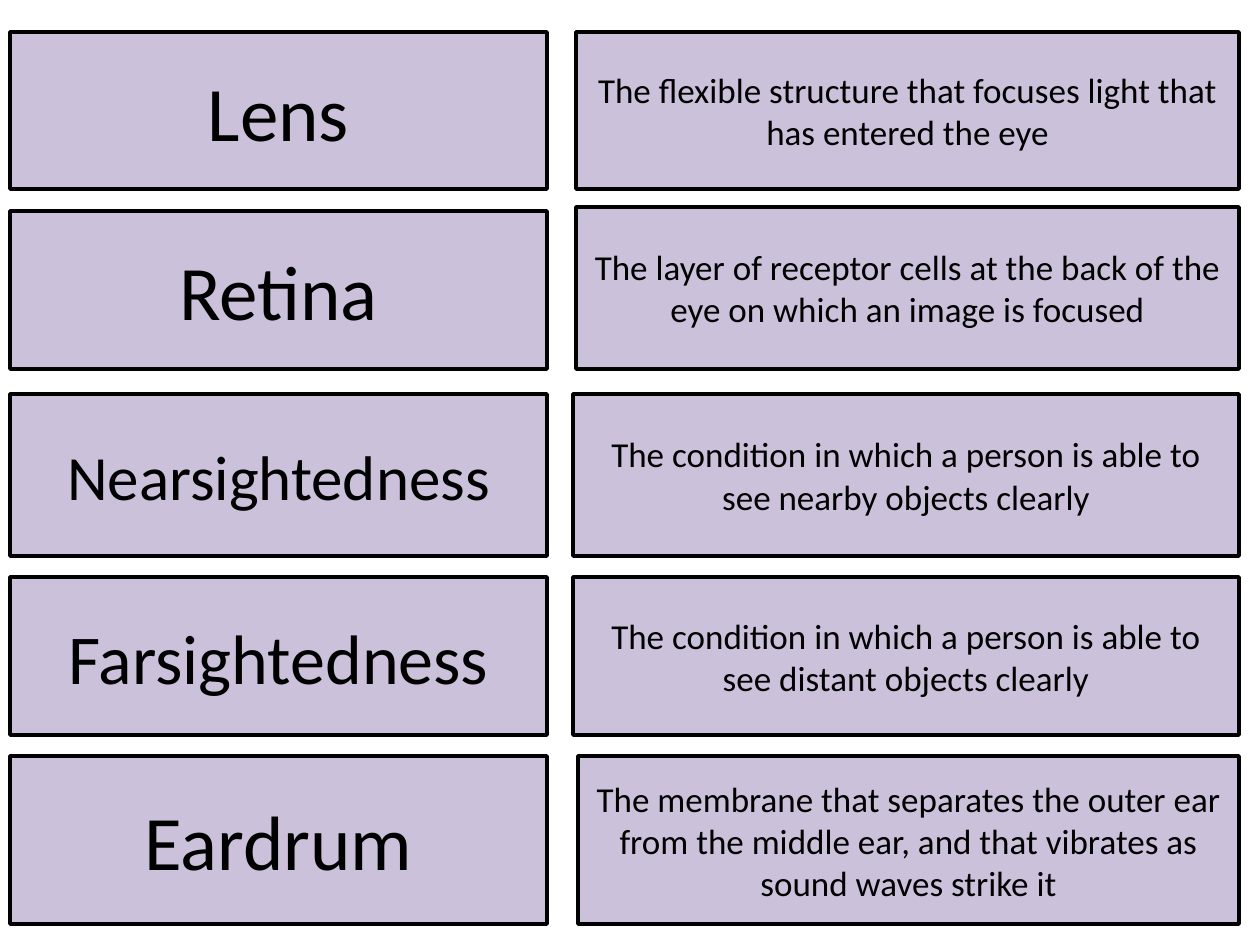
from pptx import Presentation
from pptx.dml.color import RGBColor
from pptx.enum.shapes import MSO_SHAPE
from pptx.enum.text import MSO_ANCHOR, PP_ALIGN
from pptx.util import Pt

PROCESS = MSO_SHAPE.FLOWCHART_PROCESS
MIDDLE = MSO_ANCHOR.MIDDLE
CENTER = PP_ALIGN.CENTER
LILAC = RGBColor(0xCC, 0xC1, 0xDA)
BLACK = RGBColor(0, 0, 0)

FONT = "Calibri"
DEFINITION_SIZE = 20
TERM_LEFT, TERM_RIGHT = 10, 547
DEFINITION_RIGHT = 1239

CARDS = [
    {"term": "Lens", "size": 44, "top": 32, "bottom": 189,
     "definition": "The flexible structure that focuses light that has entered the eye",
     "definition_left": 576, "definition_top": 32},
    {"term": "Retina", "size": 44, "top": 211, "bottom": 369,
     "definition": "The layer of receptor cells at the back of the eye on which an image is focused",
     "definition_left": 576, "definition_top": 207},
    {"term": "Nearsightedness", "size": 36, "top": 394, "bottom": 556,
     "definition": "The condition in which a person is able to see nearby objects clearly",
     "definition_left": 573, "definition_top": 394},
    {"term": "Farsightedness", "size": 40, "top": 577, "bottom": 735,
     "definition": "The condition in which a person is able to see distant objects clearly",
     "definition_left": 573, "definition_top": 577},
    {"term": "Eardrum", "size": 44, "top": 756, "bottom": 924,
     "definition": "The membrane that separates the outer ear from the middle ear, "
                   "and that vibrates as sound waves strike it",
     "definition_left": 578, "definition_top": 756},
]


def px(n):
    return round(n * 914400 / 126)


def add_box(s, left, top, right, bottom, text, size):
    sp = s.shapes.add_shape(PROCESS, px(left), px(top), px(right - left), px(bottom - top))
    sp.shadow.inherit = False
    sp.fill.solid()
    sp.fill.fore_color.rgb = LILAC
    sp.line.color.rgb = BLACK
    sp.line.width = Pt(2)
    tf = sp.text_frame
    tf.word_wrap = True
    tf.vertical_anchor = MIDDLE
    p = tf.paragraphs[0]
    p.alignment = CENTER
    r = p.add_run()
    r.text = text
    r.font.name = FONT
    r.font.size = Pt(size)
    r.font.color.rgb = BLACK


prs = Presentation()
prs.slide_width, prs.slide_height = px(1260), px(945)
s = prs.slides.add_slide(prs.slide_layouts[6])

for card in CARDS:
    add_box(s, TERM_LEFT, card["top"], TERM_RIGHT, card["bottom"], card["term"], card["size"])
    add_box(s, card["definition_left"], card["definition_top"], DEFINITION_RIGHT,
            card["bottom"], card["definition"], DEFINITION_SIZE)

prs.save("out.pptx")
